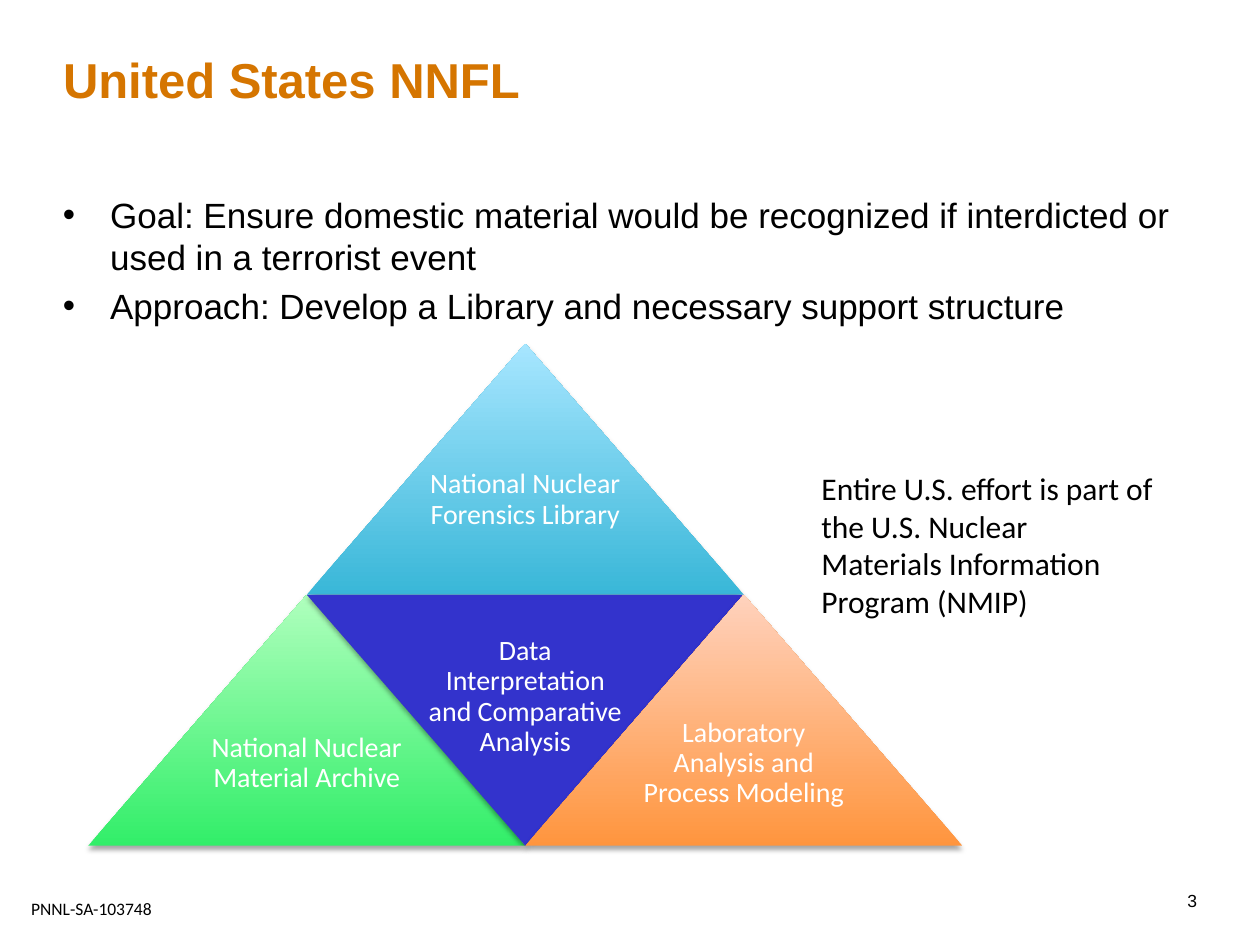
from dataclasses import dataclass

from lxml import etree
from pptx import Presentation
from pptx.dml.color import RGBColor
from pptx.enum.shapes import MSO_SHAPE
from pptx.enum.text import MSO_ANCHOR, MSO_AUTO_SIZE, PP_ALIGN
from pptx.oxml import parse_xml
from pptx.oxml.ns import nsdecls, qn
from pptx.util import Cm, Pt

TRIANGLE = MSO_SHAPE.ISOSCELES_TRIANGLE
TOP, MIDDLE = MSO_ANCHOR.TOP, MSO_ANCHOR.MIDDLE
LEFT, CENTER, RIGHT = PP_ALIGN.LEFT, PP_ALIGN.CENTER, PP_ALIGN.RIGHT
NO_AUTOFIT = MSO_AUTO_SIZE.NONE


@dataclass(frozen=True)
class Theme:
    """Fonts, type sizes and colours of the slide."""
    heading_font: str = "Arial"
    label_font: str = "Calibri"
    title_size: int = 28
    body_size: int = 20
    note_size: int = 18
    label_size: int = 16
    footer_size: int = 10
    accent: str = "D57500"
    text: str = "000000"
    label: str = "FFFFFF"
    library: tuple = ("39B7D8", "A7E6FF")
    archive: tuple = ("32EE69", "AFFFBD")
    analysis: tuple = ("3333CC",)
    laboratory: tuple = ("FF953E", "FFD2BD")


THEME = Theme()
TRI_W, TRI_H = 8.81, 5.06
PYRAMID_LEFT, PYRAMID_TOP = 1.78, 6.93
LABEL_W, LABEL_H = 4.4, 2.5


def add_run(p, text, font, size, color, bold=False):
    """Add one formatted run to a paragraph."""
    r = p.add_run()
    r.text = text
    r.font.name, r.font.size, r.font.bold = font, Pt(size), bold
    r.font.color.rgb = RGBColor.from_string(color)


def set_frame(tf, inset=(0, 0), anchor=TOP, wrap=True):
    """Set the insets, anchor and wrapping of a text frame."""
    tf.margin_left = tf.margin_right = Cm(inset[0])
    tf.margin_top = tf.margin_bottom = Cm(inset[1])
    tf.vertical_anchor, tf.word_wrap = anchor, wrap
    tf.auto_size = NO_AUTOFIT


def add_text(s, box, text, font, size, color=THEME.text, align=LEFT,
             spacing=1.0, **frame):
    """Add a text box with a single paragraph."""
    tf = s.shapes.add_textbox(*map(Cm, box)).text_frame
    set_frame(tf, **frame)
    p = tf.paragraphs[0]
    p.alignment, p.line_spacing = align, spacing
    add_run(p, text, font, size, color)


def add_title(s, text):
    """Place and format the title placeholder."""
    sp = s.shapes.title
    sp.left, sp.top, sp.width, sp.height = map(Cm, (1.27, 0.99, 18.42, 1.19))
    set_frame(sp.text_frame)
    p = sp.text_frame.paragraphs[0]
    p.alignment = LEFT
    add_run(p, text, THEME.heading_font, THEME.title_size, THEME.accent, True)


def add_bullets(s, box, items):
    """Add a bulleted list with hanging indents."""
    tf = s.shapes.add_textbox(*map(Cm, box)).text_frame
    set_frame(tf)
    for i, item in enumerate(items):
        p = tf.paragraphs[0] if i == 0 else tf.add_paragraph()
        pPr = p._p.get_or_add_pPr()
        pPr.set("marL", str(Cm(0.95)))
        pPr.set("indent", str(-Cm(0.95)))
        etree.SubElement(pPr, qn("a:buFont")).set("typeface", THEME.heading_font)
        etree.SubElement(pPr, qn("a:buChar")).set("char", "•")
        if i:
            p.space_before = Pt(4)
        add_run(p, item, THEME.heading_font, THEME.body_size, THEME.text)


def add_shadow(sp):
    """Give a shape a soft shadow falling straight down."""
    sp._element.spPr.append(parse_xml(
        f'<a:effectLst {nsdecls("a")}>'
        f'<a:outerShdw blurRad="{Pt(3.1)}" dist="{Pt(1.8)}" dir="5400000" '
        'rotWithShape="0"><a:srgbClr val="000000"><a:alpha val="35000"/>'
        '</a:srgbClr></a:outerShdw></a:effectLst>'))


def add_triangle(s, column, row, colors, text, label_center, rotation=0):
    """Add a pyramid part and its label, placed by half-width columns."""
    left = PYRAMID_LEFT + column * TRI_W / 2
    top = PYRAMID_TOP + row * TRI_H
    sp = s.shapes.add_shape(TRIANGLE, Cm(left), Cm(top), Cm(TRI_W), Cm(TRI_H))
    sp.rotation = rotation
    sp.line.fill.background()
    if len(colors) == 1:
        sp.fill.solid()
        sp.fill.fore_color.rgb = RGBColor.from_string(colors[0])
    else:
        sp.fill.gradient()
        sp.fill.gradient_angle = 90
        for stop, color in zip(sp.fill.gradient_stops, colors):
            stop.color.rgb = RGBColor.from_string(color)
    add_shadow(sp)
    box = (left + (TRI_W - LABEL_W) / 2, top + label_center - LABEL_H / 2,
           LABEL_W, LABEL_H)
    add_text(s, box, text, THEME.label_font, THEME.label_size, THEME.label,
             CENTER, 0.9, inset=(0.15, 0.15), anchor=MIDDLE)


def main():
    """Build the slide and save it."""
    prs = Presentation()
    prs.slide_width, prs.slide_height = Cm(25.4), Cm(19.05)
    s = prs.slides.add_slide(prs.slide_layouts[5])
    add_title(s, "United States NNFL")
    add_bullets(s, (1.27, 3.9, 22.86, 3), (
        "Goal: Ensure domestic material would be recognized if interdicted "
        "or used in a terrorist event",
        "Approach: Develop a Library and necessary support structure"))
    add_triangle(s, 1, 0, THEME.library,
                 "National Nuclear Forensics Library", 3.15)
    add_triangle(s, 0, 1, THEME.archive,
                 "National Nuclear Material Archive", 3.4)
    add_triangle(s, 1, 1, THEME.analysis,
                 "Data Interpretation and Comparative Analysis", 2.06, 180)
    add_triangle(s, 2, 1, THEME.laboratory,
                 "Laboratory Analysis and Process Modeling", 3.4)
    add_text(s, (16.31, 9.32, 7.19, 3.33),
             "Entire U.S. effort is part of the U.S. Nuclear Materials "
             "Information Program (NMIP)",
             THEME.label_font, THEME.note_size, inset=(0.25, 0.13))
    add_text(s, (18.21, 17.65, 5.92, 1.02), "3", THEME.heading_font,
             THEME.footer_size, align=RIGHT, anchor=MIDDLE)
    add_text(s, (0.38, 17.98, 2.97, 0.69), "PNNL-SA-103748", THEME.label_font,
             THEME.footer_size, inset=(0.25, 0.13), wrap=False)
    prs.save("out.pptx")


if __name__ == "__main__":
    main()
